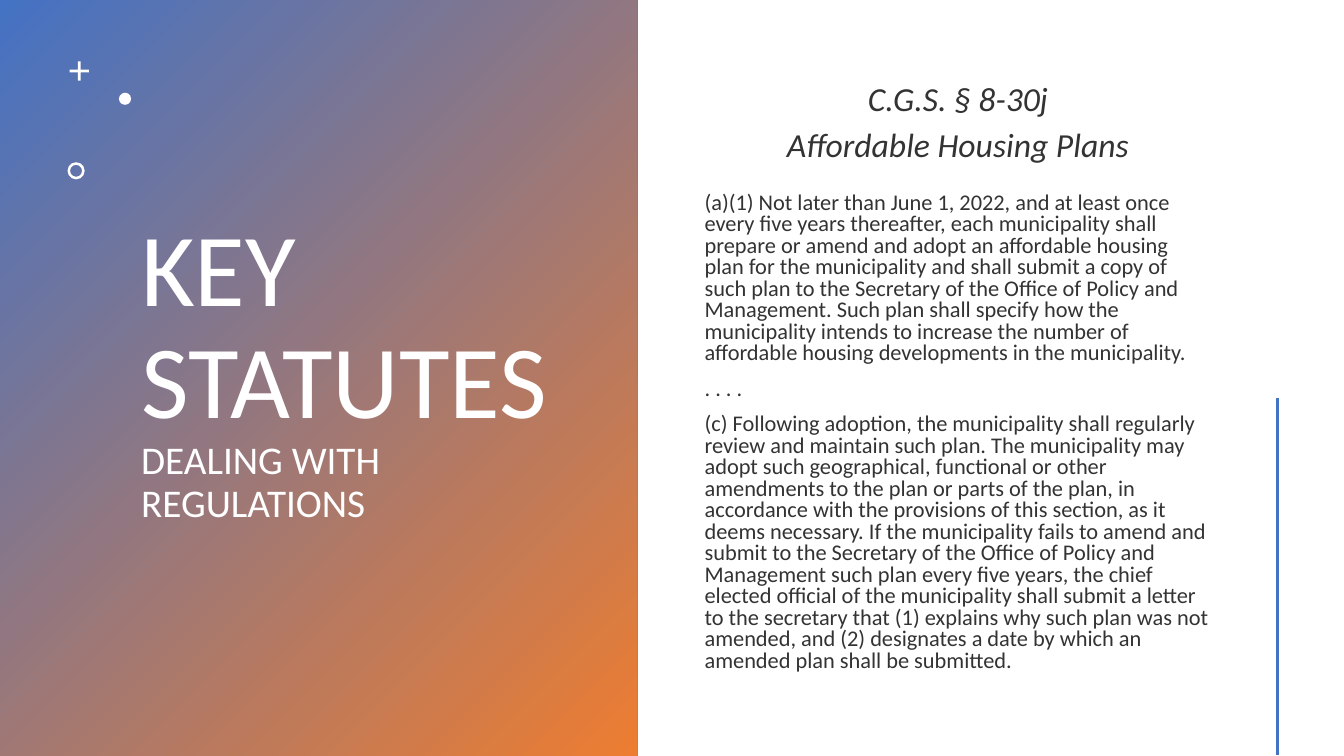
from copy import deepcopy

from pptx import Presentation
from pptx.dml.color import RGBColor
from pptx.enum.shapes import MSO_CONNECTOR, MSO_SHAPE
from pptx.enum.text import MSO_ANCHOR, MSO_AUTO_SIZE, PP_ALIGN
from pptx.oxml.ns import qn
from pptx.util import Inches, Pt

# Content
TITLE_LINES = [("KEY STATUTES", 74), ("DEALING WITH", 28), ("REGULATIONS", 28)]
HEADING = ["C.G.S. § 8-30j", "Affordable Housing Plans"]
STATUTE = [
    "(a)(1) Not later than June 1, 2022, and at least once every five years "
    "thereafter, each municipality shall prepare or amend and adopt an affordable "
    "housing plan for the municipality and shall submit a copy of such plan to the "
    "Secretary of the Office of Policy and Management. Such plan shall specify how "
    "the municipality intends to increase the number of affordable housing "
    "developments in the municipality.",
    ". . . .",
    "(c) Following adoption, the municipality shall regularly review and maintain "
    "such plan. The municipality may adopt such geographical, functional or other "
    "amendments to the plan or parts of the plan, in accordance with the provisions "
    "of this section, as it deems necessary. If the municipality fails to amend and "
    "submit to the Secretary of the Office of Policy and Management such plan every "
    "five years, the chief elected official of the municipality shall submit a "
    "letter to the secretary that (1) explains why such plan was not amended, and "
    "(2) designates a date by which an amended plan shall be submitted.",
]

# Look
FONT = "Calibri"
WHITE = RGBColor(0xFF, 0xFF, 0xFF)
BLUE = RGBColor(0x44, 0x72, 0xC4)
ORANGE = RGBColor(0xED, 0x7D, 0x31)
INK = RGBColor(0x33, 0x33, 0x33)
LEFT, CENTER = PP_ALIGN.LEFT, PP_ALIGN.CENTER

# Ornaments: preset, left, top, size, adjustment
ORNAMENTS = [
    (MSO_SHAPE.CROSS, 0.69, 0.61, 0.19, 0.43),
    (MSO_SHAPE.OVAL, 1.18, 0.92, 0.12, None),
    (MSO_SHAPE.DONUT, 0.67, 1.61, 0.17, 0.15),
]


def set_all(target, values):
    for name, value in values.items():
        setattr(target, name, value)


def add_span(para, text, size, color, italic=False):
    span = para.add_run()
    span.text = text
    set_all(span.font, {"name": FONT, "size": Pt(size), "italic": italic})
    span.font.color.rgb = color
    return span


def set_frame(frame):
    set_all(frame, {"word_wrap": True, "auto_size": MSO_AUTO_SIZE.NONE,
                    "vertical_anchor": MSO_ANCHOR.MIDDLE})


deck = Presentation()
deck.slide_width, deck.slide_height = Inches(13.33), Inches(7.5)
page = deck.slides.add_slide(deck.slide_layouts[5])

# Gradient panel, placed behind the title
panel = page.shapes.add_shape(MSO_SHAPE.RECTANGLE, 0, 0, Inches(6.32), Inches(7.5))
panel.shadow.inherit = False
panel.line.fill.background()
panel.fill.gradient()
panel.fill.gradient_angle = 315
for stop, color, position in zip(panel.fill.gradient_stops, (BLUE, ORANGE), (0, 1)):
    stop.color.rgb = color
    stop.position = position
title = page.shapes.title
panel._element.addnext(title._element)

# Title
set_all(title, {"left": Inches(1.3), "top": Inches(0.42),
                "width": Inches(4.38), "height": Inches(6.53)})
set_frame(title.text_frame)
para = title.text_frame.paragraphs[0]
set_all(para, {"alignment": LEFT, "line_spacing": 0.9})
for number, (text, size) in enumerate(TITLE_LINES, 1):
    span = add_span(para, text, size, WHITE)
    if number < len(TITLE_LINES):
        para.add_line_break()
        line_break = para._p.findall(qn("a:br"))[-1]
        line_break.append(deepcopy(span._r.rPr))  # the break keeps its line's size

# Ornaments
ornaments = page.shapes.add_group_shape()
for preset, left, top, size, adjustment in ORNAMENTS:
    mark = ornaments.shapes.add_shape(
        preset, Inches(left), Inches(top), Inches(size), Inches(size))
    mark.shadow.inherit = False
    mark.fill.solid()
    mark.fill.fore_color.rgb = WHITE
    mark.line.fill.background()
    if adjustment is not None:
        mark.adjustments[0] = adjustment

# Statute text: alignment, size, italic, space before, text
body = [(CENTER, 24, True, 10, text) for text in HEADING]
body += [(LEFT, 16, False, 10 if index else 20.7, text)
         for index, text in enumerate(STATUTE)]
box = page.shapes.add_textbox(Inches(6.89), Inches(0.57), Inches(5.22), Inches(6.38))
set_frame(box.text_frame)
for index, (alignment, size, italic, gap, text) in enumerate(body):
    para = box.text_frame.add_paragraph() if index else box.text_frame.paragraphs[0]
    set_all(para, {"alignment": alignment, "line_spacing": 0.8,
                   "space_before": Pt(gap)})
    add_span(para, text, size, INK, italic)

# Accent line
accent = page.shapes.add_connector(
    MSO_CONNECTOR.STRAIGHT, Inches(12.67), Inches(3.95), Inches(12.67), Inches(7.49))
accent.line.color.rgb = BLUE
accent.line.width = Pt(2)
properties = accent._element.spPr
properties.append(properties.makeelement(qn("a:effectLst"), {}))

deck.save("out.pptx")
